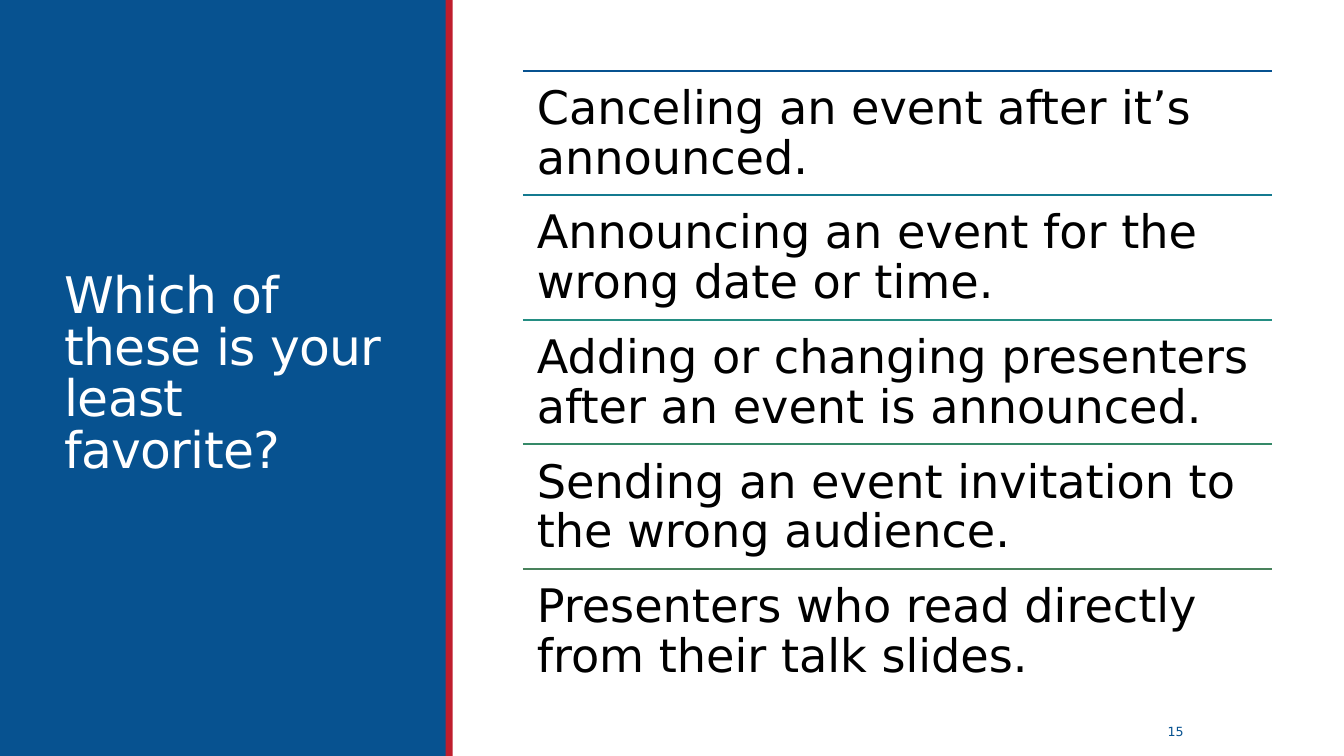
from lxml.etree import SubElement as Sub
from pptx import Presentation
from pptx.dml.color import RGBColor as RGB
from pptx.enum.shapes import MSO_CONNECTOR as LINK, MSO_SHAPE as SHAPE
from pptx.enum.text import MSO_ANCHOR as ANCHOR, MSO_AUTO_SIZE as AUTO, PP_ALIGN as ALIGN
from pptx.oxml.ns import qn
from pptx.util import Cm, Pt

HUES = {"blue": "075290", "red": "BF1E2D", "white": "FFFFFF", "black": "000000"}
RULES = ["075290", "147A90", "248D82", "358968", "49825C"]
FONT = "DejaVu Sans"
ITEMS = [
    "Canceling an event after it’s announced.",
    "Announcing an event for the wrong date or time.",
    "Adding or changing presenters after an event is announced.",
    "Sending an event invitation to the wrong audience.",
    "Presenters who read directly from their talk slides.",
]


def write(frame, text, size, hue, anchor, pad=None, **para):
    """Fill a text frame with one styled paragraph."""
    form = {"word_wrap": True, "auto_size": AUTO.NONE, "vertical_anchor": anchor}
    if pad is not None:
        for side in ("left", "right", "top", "bottom"):
            form["margin_" + side] = Cm(pad)
    for key, value in form.items():
        setattr(frame, key, value)
    line = frame.paragraphs[0]
    for key, value in para.items():
        setattr(line, key, value)
    run = line.add_run()
    run.text = text
    for key, value in {"name": FONT, "size": Pt(size)}.items():
        setattr(run.font, key, value)
    run.font.color.rgb = RGB.from_string(HUES[hue])
    return run


def block(slide, box, hue):
    """Draw a plain filled rectangle."""
    shape = slide.shapes.add_shape(SHAPE.RECTANGLE, *map(Cm, box))
    shape.shadow.inherit = False
    shape.fill.solid()
    shape.fill.fore_color.rgb = RGB.from_string(HUES[hue])
    shape.line.fill.background()


def panel(slide, left, top, width, height):
    """Side panel with the question and a red edge."""
    block(slide, (left, top, width, height), "blue")
    title = slide.shapes.title
    place = {"left": left + 1.37, "top": top + 1.45,
             "width": width - 2.69, "height": height - 3.02}
    for key, value in place.items():
        setattr(title, key, Cm(value))
    run = write(title.text_frame, "Which of these is your least favorite?", 36,
                "white", ANCHOR.MIDDLE, alignment=ALIGN.LEFT, line_spacing=0.85)
    run.font._element.set("spc", "-50")
    # Bring the title in front of the panel
    slide.shapes._spTree.append(title._element)
    block(slide, (left + width - 0.02, top, 0.18, height), "red")


def rule(slide, left, top, width, hue):
    """Thin line above a row."""
    line = slide.shapes.add_connector(
        LINK.STRAIGHT, Cm(left), Cm(top), Cm(left + width), Cm(top))
    line.line.color.rgb = RGB.from_string(hue)
    line.line.width = Pt(1.25)
    Sub(line._element.spPr, qn("a:effectLst"))


def rows(slide, left, top, width, height):
    """Equal rows, each with a line on top."""
    step = height / len(ITEMS)
    for i, (item, hue) in enumerate(zip(ITEMS, RULES)):
        y = top + i * step
        rule(slide, left, y, width, hue)
        box = slide.shapes.add_textbox(Cm(left), Cm(y), Cm(width), Cm(step))
        write(box.text_frame, item, 33, "black", ANCHOR.TOP, 0.35, line_spacing=0.9)


def number(slide, left, top, width, height):
    """Page number."""
    box = slide.shapes.add_textbox(Cm(left), Cm(top), Cm(width), Cm(height))
    write(box.text_frame, "15", 9, "blue", ANCHOR.MIDDLE,
          alignment=ALIGN.CENTER, space_after=Pt(6))


def main():
    deck = Presentation()
    deck.slide_width, deck.slide_height = Cm(33.87), Cm(19.05)
    slide = deck.slides.add_slide(deck.slide_layouts[5])
    panel(slide, 0, 0, 11.25, 19.05)
    number(slide, 28.12, 17.93, 3.02, 1.02)
    rows(slide, 13.18, 1.78, 18.87, 15.69)
    deck.save("out.pptx")


if __name__ == "__main__":
    main()
